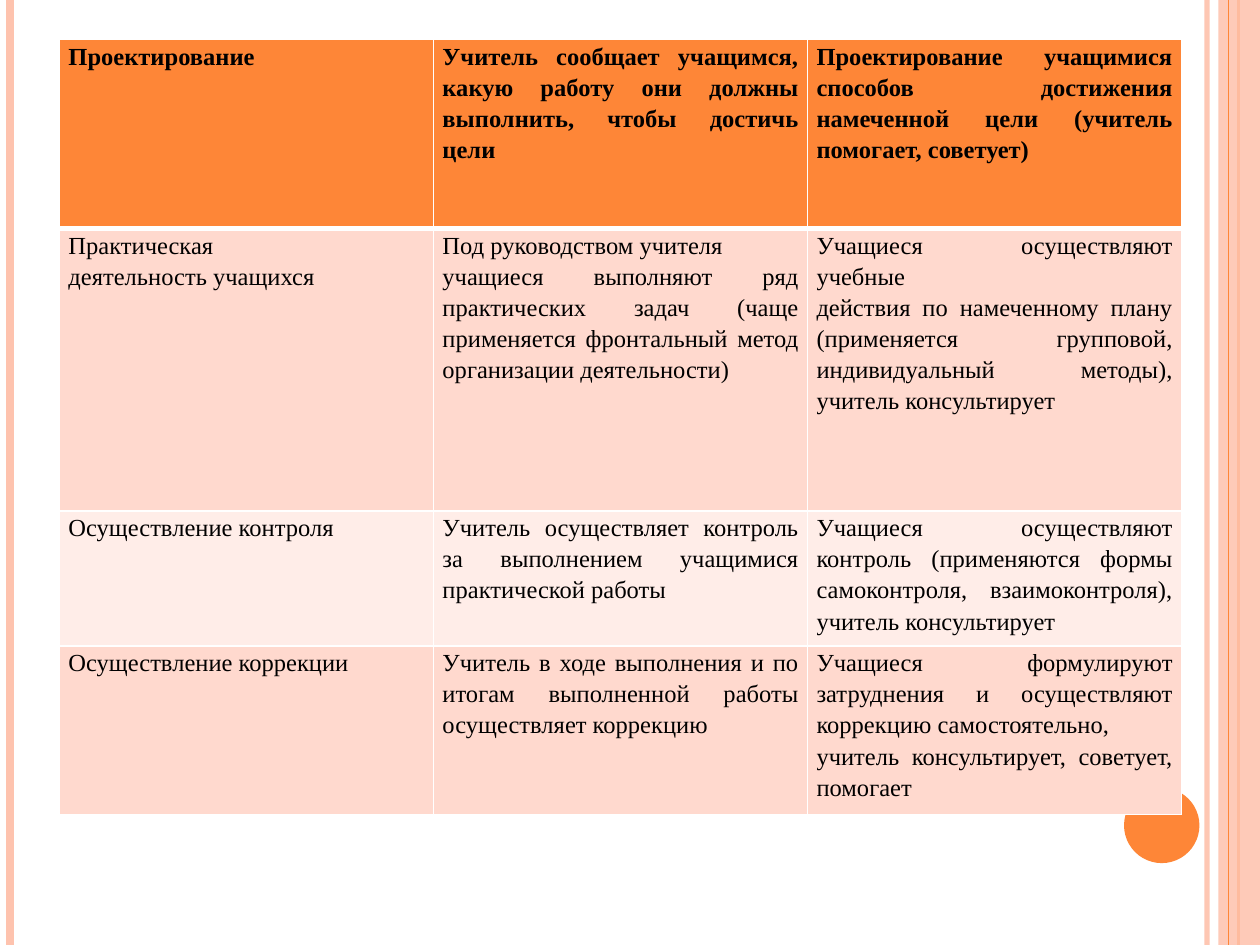
from lxml import etree
from pptx import Presentation
from pptx.dml.color import RGBColor
from pptx.enum.shapes import MSO_CONNECTOR, MSO_SHAPE
from pptx.enum.text import PP_ALIGN
from pptx.oxml.ns import qn
from pptx.util import Cm, Pt

ORANGE, PEACH = "FE8637", "FEC3AE"
BAND_DARK, BAND_LIGHT = "FFD9CE", "FFEDE8"
WHITE, BLACK = "FFFFFF", "000000"
WIDTH, HEIGHT = 25.4, 19.05


def colour(value):
    return RGBColor.from_string(value)


def add_alpha(element, percent):
    for tint in element.iter(qn("a:srgbClr")):
        etree.SubElement(tint, qn("a:alpha"), val=str(percent * 1000))


class SlideBuilder:
    font_name = "Times New Roman"
    font_size = 14
    line_spacing = 1.15
    cell_margin = 0.18

    def __init__(self, slide):
        self.slide = slide

    def stripe(self, x, weight, value, opacity=100):
        line = self.slide.shapes.add_connector(
            MSO_CONNECTOR.STRAIGHT, Cm(x), Cm(0), Cm(x), Cm(HEIGHT))
        line.line.width = Pt(weight)
        line.line.color.rgb = colour(value)
        if opacity < 100:
            add_alpha(line._element.spPr, opacity)
        etree.SubElement(line._element.spPr, qn("a:effectLst"))

    def shape(self, kind, left, top, width, height, value, opacity=100):
        shape = self.slide.shapes.add_shape(
            kind, Cm(left), Cm(top), Cm(width), Cm(height))
        shape.shadow.inherit = False
        shape.fill.solid()
        shape.fill.fore_color.rgb = colour(value)
        shape.line.fill.background()
        if opacity < 100:
            add_alpha(shape._element.spPr, opacity)

    def borders(self, cell, **weights):
        properties = cell._tc.get_or_add_tcPr()
        for side in "LRTB":
            line = etree.SubElement(properties, qn(f"a:ln{side}"),
                                    w=str(Pt(weights.get(side, 1))))
            fill = etree.SubElement(line, qn("a:solidFill"))
            etree.SubElement(fill, qn("a:srgbClr"), val=WHITE)

    def cell(self, cell, text, fill, bold):
        cell.margin_left = cell.margin_right = Cm(self.cell_margin)
        cell.margin_top = cell.margin_bottom = 0
        cell.fill.solid()
        cell.fill.fore_color.rgb = colour(fill)
        cell.text_frame.text = text
        for paragraph in cell.text_frame.paragraphs:
            paragraph.alignment = PP_ALIGN.JUSTIFY
            paragraph.line_spacing = self.line_spacing
            paragraph.font.name = self.font_name
            paragraph.font.size = Pt(self.font_size)
            paragraph.font.bold = bold
            paragraph.font.color.rgb = colour(BLACK)

    def table(self, left, top, column_width, row_heights, rows, fills):
        columns = len(rows[0])
        table = self.slide.shapes.add_table(
            len(rows), columns, Cm(left), Cm(top),
            Cm(column_width * columns), Cm(sum(row_heights))).table
        for column in table.columns:
            column.width = Cm(column_width)
        for i, (texts, height, fill) in enumerate(zip(rows, row_heights, fills)):
            table.rows[i].height = Cm(height)
            for j, text in enumerate(texts):
                cell = table.cell(i, j)
                # A thick rule separates the header from the body
                self.borders(cell, T=3 if i == 1 else 1, B=3 if i == 0 else 1)
                self.cell(cell, text, fill, bold=i == 0)


ROWS = [
    ["Проектирование",
     "Учитель сообщает учащимся, какую работу они должны выполнить, "
     "чтобы достичь цели",
     "Проектирование учащимися способов достижения намеченной цели "
     "(учитель помогает, советует)"],
    ["Практическая\nдеятельность учащихся",
     "Под руководством учителя\nучащиеся выполняют ряд практических задач "
     "(чаще применяется фронтальный метод организации деятельности)",
     "Учащиеся осуществляют учебные\nдействия по намеченному плану "
     "(применяется групповой, индивидуальный методы), учитель консультирует"],
    ["Осуществление контроля",
     "Учитель осуществляет контроль за выполнением учащимися "
     "практической работы",
     "Учащиеся осуществляют контроль (применяются формы самоконтроля, "
     "взаимоконтроля), учитель консультирует"],
    ["Осуществление коррекции",
     "Учитель в ходе выполнения и по итогам выполненной работы "
     "осуществляет коррекцию",
     "Учащиеся формулируют затруднения и осуществляют коррекцию "
     "самостоятельно,\nучитель консультирует, советует, помогает"],
]


def main():
    deck = Presentation()
    deck.slide_width, deck.slide_height = Cm(WIDTH), Cm(HEIGHT)
    page = SlideBuilder(deck.slides.add_slide(deck.slide_layouts[6]))

    # Side stripes and corner disc
    page.stripe(24.33, 3, PEACH, opacity=93)
    page.stripe(0.21, 4.5, PEACH)
    page.stripe(24.97, 1.5, ORANGE)
    page.shape(MSO_SHAPE.RECTANGLE, 24.56, 0, 0.84, HEIGHT, PEACH, opacity=87)
    page.stripe(24.77, 0.75, ORANGE)
    page.shape(MSO_SHAPE.OVAL, 22.66, 15.88, 1.52, 1.52, ORANGE)

    # Comparison table
    page.table(1.2, 0.8, 7.54, [3.8, 5.7, 2.72, 3.4], ROWS,
               [ORANGE, BAND_DARK, BAND_LIGHT, BAND_DARK])

    deck.save("out.pptx")


if __name__ == "__main__":
    main()
